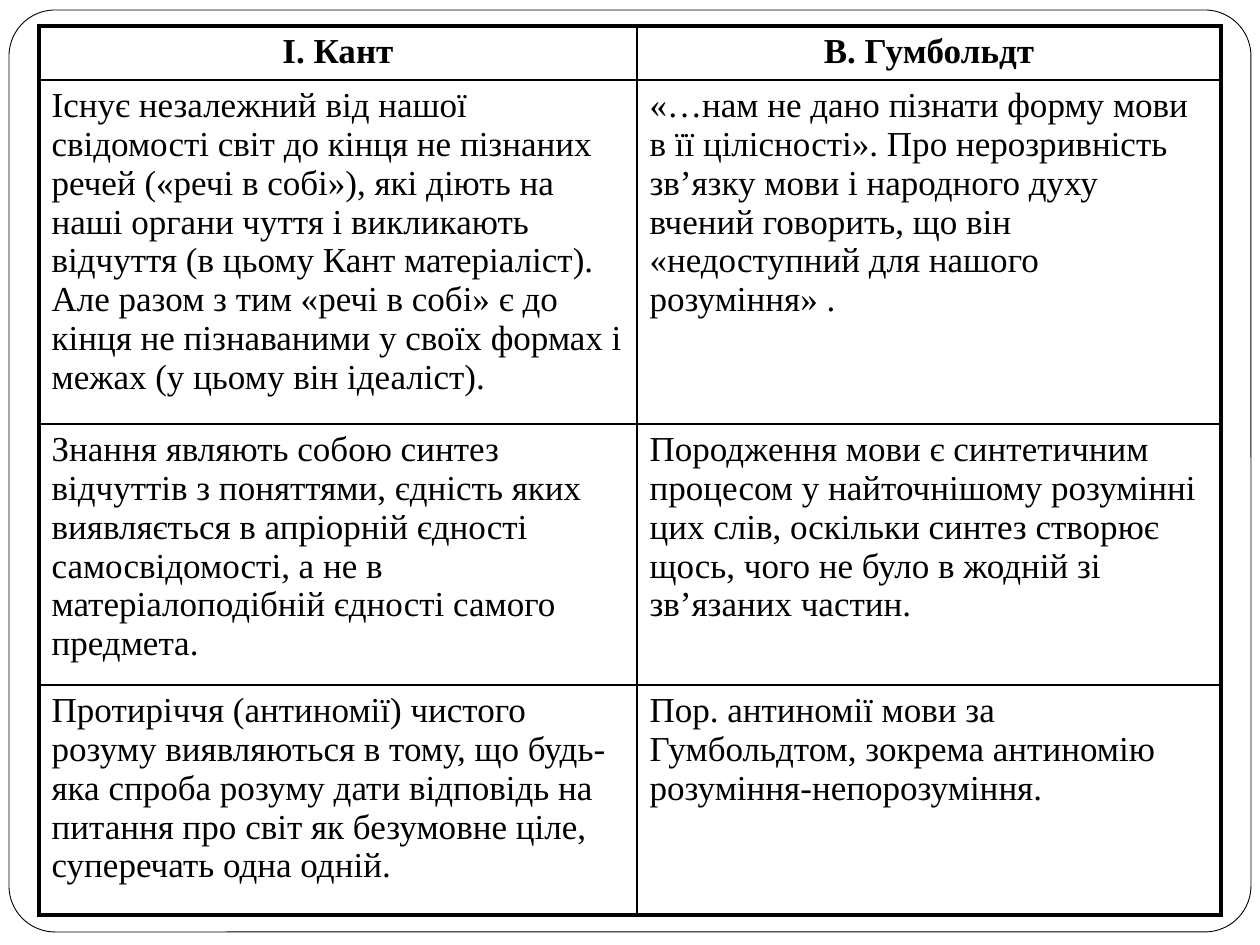
from pptx import Presentation
from pptx.dml.color import RGBColor
from pptx.enum.shapes import MSO_SHAPE as Shape
from pptx.enum.text import PP_ALIGN as Align
from pptx.oxml import parse_xml
from pptx.oxml.ns import nsdecls
from pptx.util import Pt

PX = 914400 // 126
BLACK = RGBColor(0, 0, 0)
WHITE = RGBColor(255, 255, 255)
FONT = "Times New Roman"
THIN, THICK = 1, 2.25

COLS = [598, 584]
ROWS = [54, 344, 261, 230]
TEXTS = [
    ("І. Кант", "В. Гумбольдт"),
    ("Існує незалежний від нашої свідомості світ до кінця не пізнаних речей "
     "(«речі в собі»), які діють на наші органи чуття і викликають відчуття "
     "(в цьому Кант матеріаліст). Але разом з тим «речі в собі» є до кінця не "
     "пізнаваними у своїх формах і межах (у цьому він ідеаліст).",
     "«…нам не дано пізнати форму мови в її цілісності». Про нерозривність "
     "зв’язку мови і народного духу вчений говорить, що він «недоступний для "
     "нашого розуміння» ."),
    ("Знання являють собою синтез відчуттів з поняттями, єдність яких "
     "виявляється в апріорній єдності самосвідомості, а не в "
     "матеріалоподібній єдності самого предмета.",
     "Породження мови є синтетичним процесом у найточнішому розумінні цих "
     "слів, оскільки синтез створює щось, чого не було в жодній зі "
     "зв’язаних частин."),
    ("Протиріччя (антиномії) чистого розуму виявляються в тому, що будь-яка "
     "спроба розуму дати відповідь на питання про світ як безумовне ціле, "
     "суперечать одна одній.",
     "Пор. антиномії мови за Гумбольдтом, зокрема антиномію "
     "розуміння-непорозуміння."),
]


class Deck:
    def __init__(self, wide, high):
        self.prs = Presentation()
        self.prs.slide_width, self.prs.slide_height = wide * PX, high * PX
        self.slide = self.prs.slides.add_slide(self.prs.slide_layouts[6])

    def frame(self, x, y, w, h):
        box = self.slide.shapes.add_shape(
            Shape.ROUNDED_RECTANGLE, x * PX, y * PX, w * PX, h * PX)
        box.adjustments[0] = 0.05
        box.shadow.inherit = False
        box.fill.solid()
        box.fill.fore_color.rgb = WHITE
        box.line.color.rgb = BLACK
        box.line.width = Pt(0.5)

    def table(self, x, y, cols, rows, texts):
        grid = self.slide.shapes.add_table(
            len(rows), len(cols), x * PX, y * PX,
            sum(cols) * PX, sum(rows) * PX).table
        grid.first_row = grid.horz_banding = False
        for col, w in zip(grid.columns, cols):
            col.width = w * PX
        for row, h in zip(grid.rows, rows):
            row.height = h * PX
        for r, line in enumerate(texts):
            for c, text in enumerate(line):
                cell = grid.cell(r, c)
                self.label(cell, text, r == 0)
                self.edge(cell, L=c == 0, R=c == len(cols) - 1,
                          T=r == 0, B=r == len(rows) - 1)

    def label(self, cell, text, head):
        cell.fill.background()
        cell.text = text
        para = cell.text_frame.paragraphs[0]
        para.alignment = Align.CENTER if head else Align.LEFT
        font = para.font
        font.name, font.size, font.bold = FONT, Pt(20), head
        font.color.rgb = BLACK

    def edge(self, cell, **sides):
        """Draw the borders; a true side lies on the table's outline."""
        props = cell._tc.get_or_add_tcPr()
        for i, (side, outer) in enumerate(sides.items()):
            width = Pt(THICK if outer else THIN)
            props.insert(i, parse_xml(
                f'<a:ln{side} {nsdecls("a")} w="{width}"><a:solidFill>'
                f'<a:srgbClr val="{BLACK}"/></a:solidFill></a:ln{side}>'))


def main():
    deck = Deck(1260, 945)
    deck.frame(9, 10, 1242, 922)
    deck.table(39, 26, COLS, ROWS, TEXTS)
    deck.prs.save("out.pptx")


if __name__ == "__main__":
    main()
